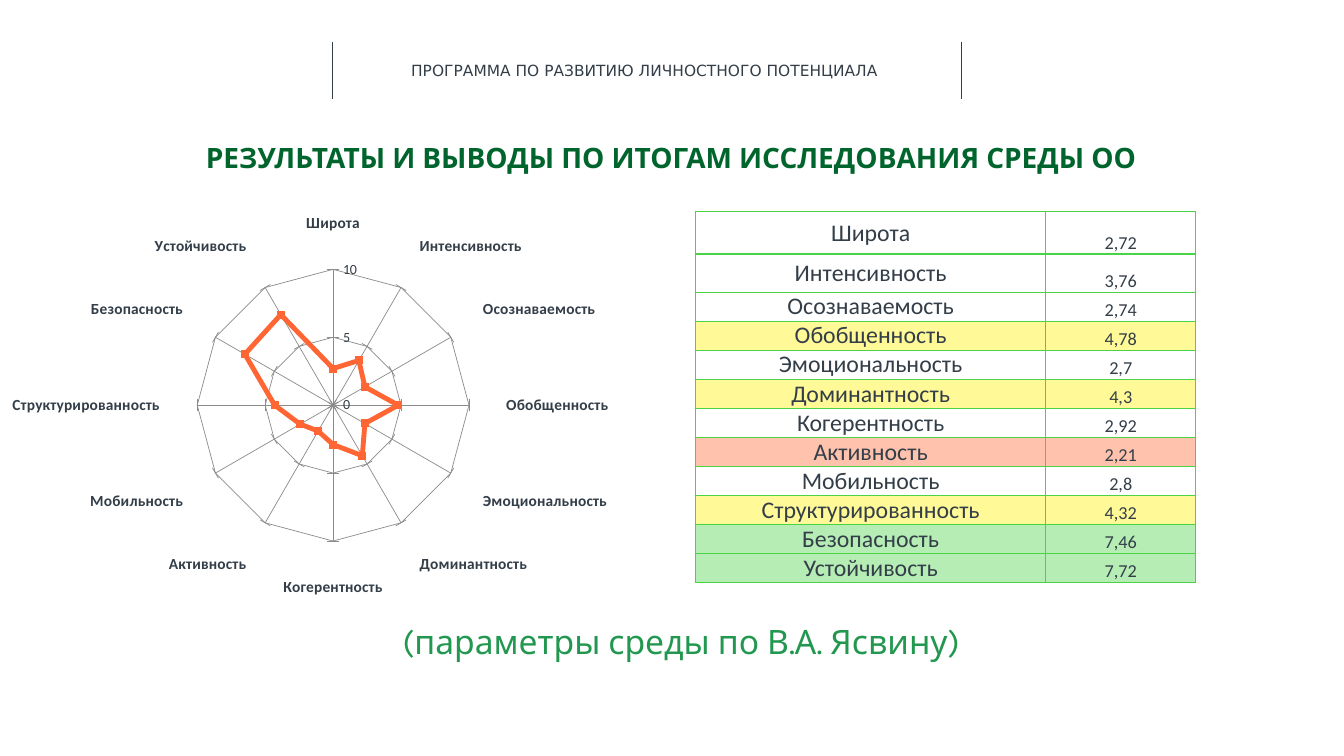
from lxml.etree import SubElement
from pptx import Presentation
from pptx.chart.data import CategoryChartData
from pptx.dml.color import RGBColor
from pptx.enum.chart import XL_CHART_TYPE, XL_MARKER_STYLE, XL_TICK_MARK
from pptx.enum.text import MSO_ANCHOR, PP_ALIGN
from pptx.oxml.ns import qn
from pptx.util import Inches, Pt

DARK, GREEN, LIGHT_GREEN = "333E48", "00642D", "22974F"
BORDER, GRID, ORANGE = "49D345", "8C8C8C", "FF6633"
YELLOW, RED, MINT = "FFF997", "FFC2AD", "B6EDB5"

PARAMETERS = [
    ("Широта", "2,72", None),
    ("Интенсивность", "3,76", None),
    ("Осознаваемость", "2,74", None),
    ("Обобщенность", "4,78", YELLOW),
    ("Эмоциональность", "2,7", None),
    ("Доминантность", "4,3", YELLOW),
    ("Когерентность", "2,92", None),
    ("Активность", "2,21", RED),
    ("Мобильность", "2,8", None),
    ("Структурированность", "4,32", YELLOW),
    ("Безопасность", "7,46", MINT),
    ("Устойчивость", "7,72", MINT),
]


def rgb(color):
    return RGBColor.from_string(color)


def set_font(font, name, size, color, bold=False):
    font.name, font.size, font.bold = name, Pt(size), bold
    font.color.rgb = rgb(color)


def set_text(tf, text, align, *font, margin=0):
    tf.text = text
    tf.word_wrap = True
    tf.vertical_anchor = MSO_ANCHOR.MIDDLE
    tf.margin_left = tf.margin_right = Inches(margin)
    tf.margin_top = tf.margin_bottom = 0
    p = tf.paragraphs[0]
    p.alignment = align
    set_font(p.runs[0].font, *font)


def add_header(slide, left, top, width, height):
    """Programme name between two vertical rules."""
    for x in (left, left + width):
        line = slide.shapes.add_connector(
            1, Inches(x), Inches(top), Inches(x), Inches(top + height))
        line.line.color.rgb = rgb(DARK)
        line.line.width = Pt(0.5)
        SubElement(line._element.spPr, qn("a:effectLst"))
    box = slide.shapes.add_textbox(
        Inches(left + 0.68), Inches(top + 0.13), Inches(4.87), Inches(0.29))
    set_text(box.text_frame, "ПРОГРАММА ПО РАЗВИТИЮ ЛИЧНОСТНОГО ПОТЕНЦИАЛА",
             PP_ALIGN.LEFT, "DejaVu Sans", 11, DARK, margin=0.1)


def add_title(slide, left, top, width, height):
    title = slide.shapes.title
    title.left, title.top = Inches(left), Inches(top)
    title.width, title.height = Inches(width), Inches(height)
    set_text(title.text_frame,
             "РЕЗУЛЬТАТЫ И ВЫВОДЫ ПО ИТОГАМ ИССЛЕДОВАНИЯ СРЕДЫ ОО",
             PP_ALIGN.CENTER, "Karla", 20, GREEN, True)


def add_caption(slide, left, top, width, height):
    box = slide.shapes.add_textbox(
        Inches(left), Inches(top), Inches(width), Inches(height))
    set_text(box.text_frame, "(параметры среды по В.А. Ясвину)",
             PP_ALIGN.CENTER, "Karla", 24, LIGHT_GREEN)


def add_radar(slide, left, top, width, height):
    data = CategoryChartData()
    data.categories = [name for name, _, _ in PARAMETERS]
    data.add_series("Series 1", [round(float(value.replace(",", ".")), 1)
                                 for _, value, _ in PARAMETERS])
    chart = slide.shapes.add_chart(
        XL_CHART_TYPE.RADAR_MARKERS, Inches(left), Inches(top),
        Inches(width), Inches(height), data).chart
    chart.has_legend = chart.has_title = False
    set_font(chart.font, "Calibri", 10, DARK)

    for axis, size, bold in ((chart.category_axis, 11, True),
                             (chart.value_axis, 10, False)):
        axis.has_major_gridlines = True
        axis.major_tick_mark = XL_TICK_MARK.CROSS
        set_font(axis.tick_labels.font, "Calibri", size, DARK, bold)
        for line in (axis.major_gridlines.format.line, axis.format.line):
            line.color.rgb = rgb(GRID)
            line.width = Pt(0.5)
    value_axis = chart.value_axis
    value_axis.minimum_scale, value_axis.maximum_scale = 0, 10
    value_axis.major_unit = 5
    value_axis.tick_labels.number_format = "General"
    value_axis.tick_labels.number_format_is_linked = False

    chart.plots[0].vary_by_categories = False
    series = chart.plots[0].series[0]
    series.smooth = False
    series.format.line.color.rgb = rgb(ORANGE)
    series.format.line.width = Pt(3.5)
    series.marker.style = XL_MARKER_STYLE.SQUARE
    series.marker.size = 5
    series.marker.format.fill.solid()
    series.marker.format.fill.fore_color.rgb = rgb(ORANGE)
    series.marker.format.line.color.rgb = rgb(ORANGE)


def format_cell(cell, fill):
    tc_pr = cell._tc.get_or_add_tcPr()
    for side in ("lnL", "lnR", "lnT", "lnB"):
        border = SubElement(tc_pr, qn(f"a:{side}"), w=str(Pt(1)))
        SubElement(SubElement(border, qn("a:solidFill")),
                   qn("a:srgbClr"), val=BORDER)
    if fill:
        cell.fill.solid()
        cell.fill.fore_color.rgb = rgb(fill)
    else:
        cell.fill.background()


def add_table(slide, left, top, width, height):
    table = slide.shapes.add_table(
        len(PARAMETERS), 2, Inches(left), Inches(top),
        Inches(width), Inches(height)).table
    table.first_row = table.horz_banding = False
    for column, share in zip(table.columns, (0.7, 0.3)):
        column.width = Inches(width * share)
    tall = [0.42, 0.38]
    rest = (height - sum(tall)) / (len(PARAMETERS) - len(tall))
    for i, (name, value, fill) in enumerate(PARAMETERS):
        table.rows[i].height = Inches(tall[i] if i < len(tall) else rest)
        for j, (text, size, anchor) in enumerate((
                (name, 17, MSO_ANCHOR.MIDDLE), (value, 13, MSO_ANCHOR.BOTTOM))):
            cell = table.cell(i, j)
            cell.margin_left = cell.margin_right = 0
            cell.margin_top = cell.margin_bottom = 0
            cell.vertical_anchor = anchor
            cell.text = text
            p = cell.text_frame.paragraphs[0]
            p.alignment = PP_ALIGN.CENTER
            set_font(p.runs[0].font, "Calibri", size, DARK)
            format_cell(cell, fill)


def main():
    prs = Presentation()
    prs.slide_width, prs.slide_height = Inches(13.33), Inches(7.5)
    slide = prs.slides.add_slide(prs.slide_layouts[5])
    add_header(slide, 3.3, 0.42, 6.23, 0.56)
    add_title(slide, 0, 1.41, 13.31, 0.3)
    add_caption(slide, 0.54, 6.09, 12.43, 0.53)
    add_radar(slide, 0, 1.14, 6.16, 5.76)
    add_table(slide, 6.9, 2.1, 4.96, 3.68)
    prs.save("out.pptx")


if __name__ == "__main__":
    main()
